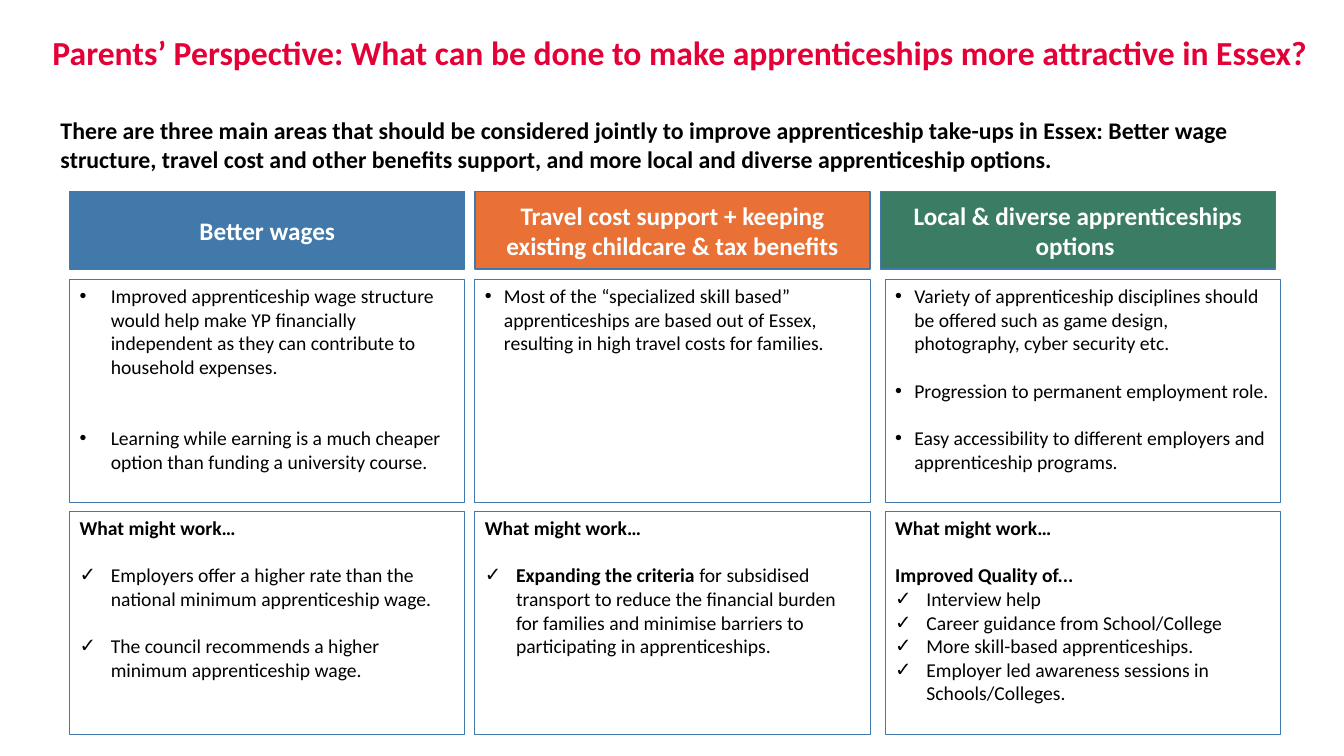
import dataclasses

import lxml.etree
import pptx
import pptx.dml.color
import pptx.enum.shapes
import pptx.enum.text
import pptx.oxml.ns
import pptx.util

Inches = pptx.util.Inches
Pt = pptx.util.Pt
ALIGN = pptx.enum.text.PP_ALIGN
ANCHOR = pptx.enum.text.MSO_ANCHOR


@dataclasses.dataclass(frozen=True)
class Theme:
    font: str = "Calibri"
    title_color: str = "E40037"
    blue: str = "4179AA"
    orange: str = "E97135"
    green: str = "3A7D64"
    ink: str = "000000"
    white: str = "FFFFFF"
    title_size: int = 24
    header_size: int = 18
    intro_size: int = 17
    body_size: int = 14


THEME = Theme()


@dataclasses.dataclass(frozen=True)
class Item:
    """One paragraph: an optional bold lead, then text; gap counts blank lines above."""
    text: str = ""
    lead: str = ""
    bullet: str = ""
    indent: float = 0.31
    gap: int = 0


LINE_PITCH = 17
COLUMN_LEFT, COLUMN_STEP, COLUMN_WIDTH = 0.69, 4.02, 3.92
HEADER_TOP, HEADER_HEIGHT = 1.9, 0.77
FINDINGS_TOP, IDEAS_TOP, PANEL_HEIGHT = 2.77, 5.07, 2.22
WORK_HEADING = Item(lead="What might work…")

COLUMNS = [
    {
        "header": "Better wages",
        "color": THEME.blue,
        "panel_shift": 0,
        "findings": [
            Item("Improved apprenticeship wage structure would help make YP financially "
                 "independent as they can contribute to household expenses.", bullet="•"),
            Item("Learning while earning is a much cheaper option than funding a "
                 "university course.", bullet="•", gap=2),
        ],
        "ideas": [
            Item("Employers offer a higher rate than the national minimum "
                 "apprenticeship wage.", bullet="✓", gap=1),
            Item("The council recommends a higher minimum apprenticeship wage.",
                 bullet="✓", gap=1),
        ],
    },
    {
        "header": "Travel cost support + keeping existing childcare & tax benefits",
        "color": THEME.orange,
        "panel_shift": 0,
        "findings": [
            Item("Most of the “specialized skill based” apprenticeships are based out of "
                 "Essex, resulting in high travel costs for families.",
                 bullet="•", indent=0.19),
        ],
        "ideas": [
            Item("for subsidised transport to reduce the financial burden for families and "
                 "minimise barriers to participating in apprenticeships.",
                 lead="Expanding the criteria ", bullet="✓", gap=1),
        ],
    },
    {
        "header": "Local & diverse apprenticeships options ",
        "color": THEME.green,
        "panel_shift": 0.05,
        "findings": [
            Item("Variety of apprenticeship disciplines should be offered such as game "
                 "design, photography, cyber security etc.", bullet="•", indent=0.19),
            Item("Progression to permanent employment role.",
                 bullet="•", indent=0.19, gap=1),
            Item("Easy accessibility to different employers and apprenticeship programs.",
                 bullet="•", indent=0.19, gap=1),
        ],
        "ideas": [
            Item(lead="Improved Quality of...", gap=1),
            Item("Interview help", bullet="✓"),
            Item("Career guidance from School/College", bullet="✓"),
            Item("More skill-based apprenticeships.", bullet="✓"),
            Item("Employer led awareness sessions in Schools/Colleges.", bullet="✓"),
        ],
    },
]


def rgb(color):
    return pptx.dml.color.RGBColor.from_string(color)


def set_values(target, values):
    for name, value in values.items():
        setattr(target, name, value)


def add_span(para, text, size, color, bold):
    span = para.add_run()
    span.text = text
    set_values(span.font, {"name": THEME.font, "size": Pt(size), "bold": bold})
    span.font.color.rgb = rgb(color)


def add_bullet(para, mark, indent):
    """Give the paragraph a bullet mark with a hanging indent."""
    properties = para._p.get_or_add_pPr()
    properties.set("marL", str(Inches(indent)))
    properties.set("indent", str(-Inches(indent)))
    for tag, key, value in (("a:buFont", "typeface", "Arial"), ("a:buChar", "char", mark)):
        element = lxml.etree.SubElement(properties, pptx.oxml.ns.qn(tag))
        element.set(key, value)


def add_plain_text(page, text, left, top, width, height, size, color):
    box = page.shapes.add_textbox(Inches(left), Inches(top), Inches(width), Inches(height))
    set_values(box.text_frame, {"word_wrap": True, "margin_left": 0, "margin_top": 0,
                                "margin_right": 0, "margin_bottom": 0})
    add_span(box.text_frame.paragraphs[0], text, size, color, True)


def add_rectangle(page, left, top, height, line_width, anchor):
    """Add an outlined, unfilled rectangle one column wide."""
    box = page.shapes.add_shape(pptx.enum.shapes.MSO_SHAPE.RECTANGLE, Inches(left),
                                Inches(top), Inches(COLUMN_WIDTH), Inches(height))
    box.shadow.inherit = False
    box.fill.background()
    box.line.color.rgb = rgb(THEME.blue)
    box.line.width = Pt(line_width)
    set_values(box.text_frame, {"word_wrap": True, "vertical_anchor": anchor})
    return box


def add_header(page, text, color, left):
    box = add_rectangle(page, left, HEADER_TOP, HEADER_HEIGHT, 1, ANCHOR.MIDDLE)
    box.fill.solid()
    box.fill.fore_color.rgb = rgb(color)
    para = box.text_frame.paragraphs[0]
    para.alignment = ALIGN.CENTER
    add_span(para, text, THEME.header_size, THEME.white, True)


def add_panel(page, items, left, top):
    box = add_rectangle(page, left, top, PANEL_HEIGHT, 0.75, ANCHOR.TOP)
    for index, item in enumerate(items):
        para = box.text_frame.add_paragraph() if index else box.text_frame.paragraphs[0]
        para.alignment = ALIGN.LEFT
        if item.gap:
            para.space_before = Pt(item.gap * LINE_PITCH)
        if item.bullet:
            add_bullet(para, item.bullet, item.indent)
        for text, bold in ((item.lead, True), (item.text, False)):
            if text:
                add_span(para, text, THEME.body_size, THEME.ink, bold)


def main():
    deck = pptx.Presentation()
    set_values(deck, {"slide_width": Inches(13.33), "slide_height": Inches(7.5)})
    page = deck.slides.add_slide(deck.slide_layouts[6])

    add_plain_text(page, "Parents’ Perspective: What can be done to make apprenticeships "
                   "more attractive in Essex?", 0.52, 0.32, 12.51, 1.16,
                   THEME.title_size, THEME.title_color)
    for index, column in enumerate(COLUMNS):
        left = COLUMN_LEFT + index * COLUMN_STEP
        panel_left = left + column["panel_shift"]
        add_header(page, column["header"], column["color"], left)
        add_panel(page, column["findings"], panel_left, FINDINGS_TOP)
        add_panel(page, [WORK_HEADING, *column["ideas"]], panel_left, IDEAS_TOP)
    add_plain_text(page, "There are three main areas that should be considered jointly to "
                   "improve apprenticeship take-ups in Essex: Better wage structure, travel "
                   "cost and other benefits support, and more local and diverse "
                   "apprenticeship options.", 0.6, 1.15, 12.32, 0.34,
                   THEME.intro_size, THEME.ink)

    deck.save("out.pptx")


if __name__ == "__main__":
    main()
